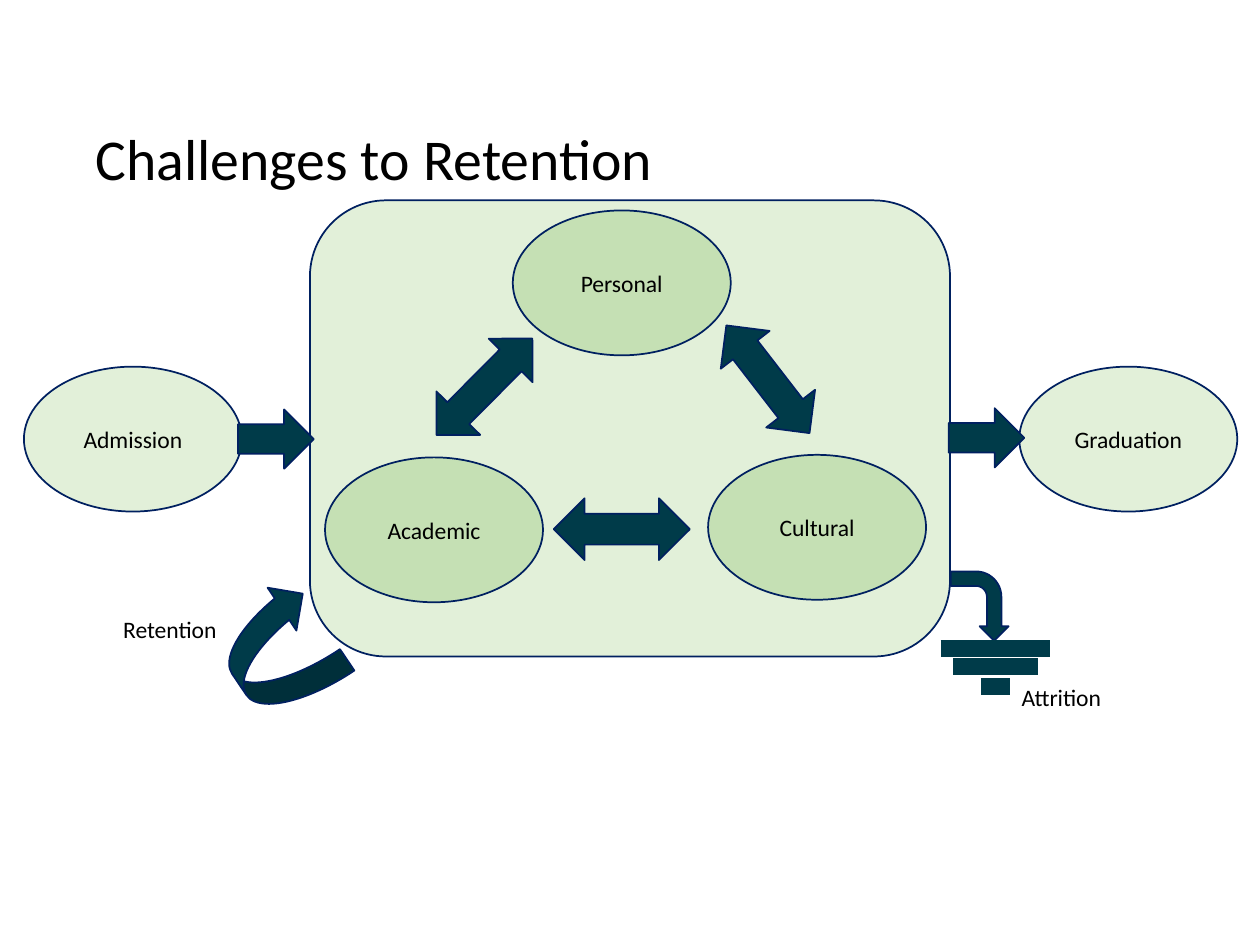
import dataclasses

import lxml.etree
import pptx
import pptx.dml.color
import pptx.enum.shapes
import pptx.enum.text
import pptx.oxml.ns
import pptx.util

KIND = pptx.enum.shapes.MSO_SHAPE
ALIGN = pptx.enum.text.PP_ALIGN
ANCHOR = pptx.enum.text.MSO_ANCHOR
FIT = pptx.enum.text.MSO_AUTO_SIZE

# The slide is a grid of 100 columns by 75 rows
COLS, ROWS = 100, 75
CELL = pptx.util.Inches(0.1)


@dataclasses.dataclass(frozen=True)
class Theme:
    font: str = "Calibri"
    head: float = 33
    body: float = 13.5
    edge: float = 1
    bar: float = 9.75
    text: str = "000000"
    pale: str = "E2F0D9"
    green: str = "C5E0B4"
    teal: str = "003B49"
    navy: str = "002060"


THEME = Theme()


def grid(*cells):
    return [round(cell * CELL) for cell in cells]


def shade(color):
    return pptx.dml.color.RGBColor.from_string(color)


def style(frame, size):
    for par in frame.paragraphs:
        for run in par.runs:
            run.font.name = THEME.font
            run.font.size = pptx.util.Pt(size)
            run.font.color.rgb = shade(THEME.text)


def add_title(slide, text, box):
    title = slide.shapes.title
    title.left, title.top, title.width, title.height = grid(*box)
    frame = title.text_frame
    frame.text = text
    frame.auto_size = FIT.NONE
    frame.vertical_anchor = ANCHOR.BOTTOM
    frame.margin_left = frame.margin_right = pptx.util.Inches(0.07)
    frame.margin_top = frame.margin_bottom = pptx.util.Inches(0.04)
    frame.paragraphs[0].alignment = ALIGN.LEFT
    frame.paragraphs[0].line_spacing = 0.9
    style(frame, THEME.head)


def add_shape(slide, kind, box, color, turn=0):
    shape = slide.shapes.add_shape(kind, *grid(*box))
    shape.shadow.inherit = False
    shape.fill.solid()
    shape.fill.fore_color.rgb = shade(color)
    shape.line.color.rgb = shade(THEME.navy)
    shape.line.width = pptx.util.Pt(THEME.edge)
    shape.rotation = turn
    return shape


def add_node(slide, text, col, row, color):
    frame = add_shape(slide, KIND.OVAL, (col, row, 17.3, 11.5), color).text_frame
    frame.text = text
    frame.vertical_anchor = ANCHOR.MIDDLE
    frame.paragraphs[0].alignment = ALIGN.CENTER
    style(frame, THEME.body)


def add_label(slide, text, box):
    frame = slide.shapes.add_textbox(*grid(*box)).text_frame
    frame.text = text
    frame.word_wrap = False
    frame.auto_size = FIT.SHAPE_TO_FIT_TEXT
    style(frame, THEME.body)


def add_bar(slide, mid, row, width):
    ends = grid(mid - width / 2, row, mid + width / 2, row)
    bar = slide.shapes.add_connector(pptx.enum.shapes.MSO_CONNECTOR.STRAIGHT, *ends)
    bar.line.color.rgb = shade(THEME.teal)
    bar.line.width = pptx.util.Pt(THEME.bar)
    props = bar.element.find(pptx.oxml.ns.qn("p:spPr"))
    lxml.etree.SubElement(props, pptx.oxml.ns.qn("a:effectLst"))


def main():
    deck = pptx.Presentation()
    deck.slide_width, deck.slide_height = grid(COLS, ROWS)
    slide = deck.slides.add_slide(deck.slide_layouts[5])

    # Panel and title
    add_shape(slide, KIND.ROUNDED_RECTANGLE, (24.6, 15.9, 50.8, 36.2), THEME.pale)
    add_title(slide, "Challenges to Retention", (6.9, 10.5, 86.2, 5.2))

    # Stages outside the panel, challenges inside it
    for text, col, row, color in (
        ("Admission", 1.9, 29.1, THEME.pale),
        ("Graduation", 80.9, 29.1, THEME.pale),
        ("Personal", 40.7, 16.7, THEME.green),
        ("Cultural", 56.2, 36.1, THEME.green),
        ("Academic", 25.8, 36.3, THEME.green),
    ):
        add_node(slide, text, col, row, color)

    # Two-way arrows between the challenges
    for col, row, turn in ((58.5, 24.7, 322.3), (36, 25.3, 44.8), (46.9, 36.6, 270)):
        add_shape(slide, KIND.UP_DOWN_ARROW, (col, row, 4.9, 10.8), THEME.teal, turn)

    # Arrows into and out of the panel
    for col, row in ((18.9, 32.5), (75.3, 32.4)):
        add_shape(slide, KIND.RIGHT_ARROW, (col, row, 6, 4.7), THEME.teal)

    # Attrition drain
    add_shape(slide, KIND.BENT_ARROW, (75, 45.8, 5.5, 4.6), THEME.teal, 90)
    for row, width in ((51.5, 8.7), (52.9, 6.7), (54.5, 2.3)):
        add_bar(slide, 79, row, width)
    add_label(slide, "Attrition", (80.1, 53.7, 8.5, 3.3))

    # Retention loop
    add_shape(slide, KIND.CURVED_DOWN_ARROW, (17.4, 47.5, 9.4, 8.2), THEME.teal, 236.1)
    add_label(slide, "Retention", (8.8, 48.3, 9.6, 3.3))

    deck.save("out.pptx")


if __name__ == "__main__":
    main()
